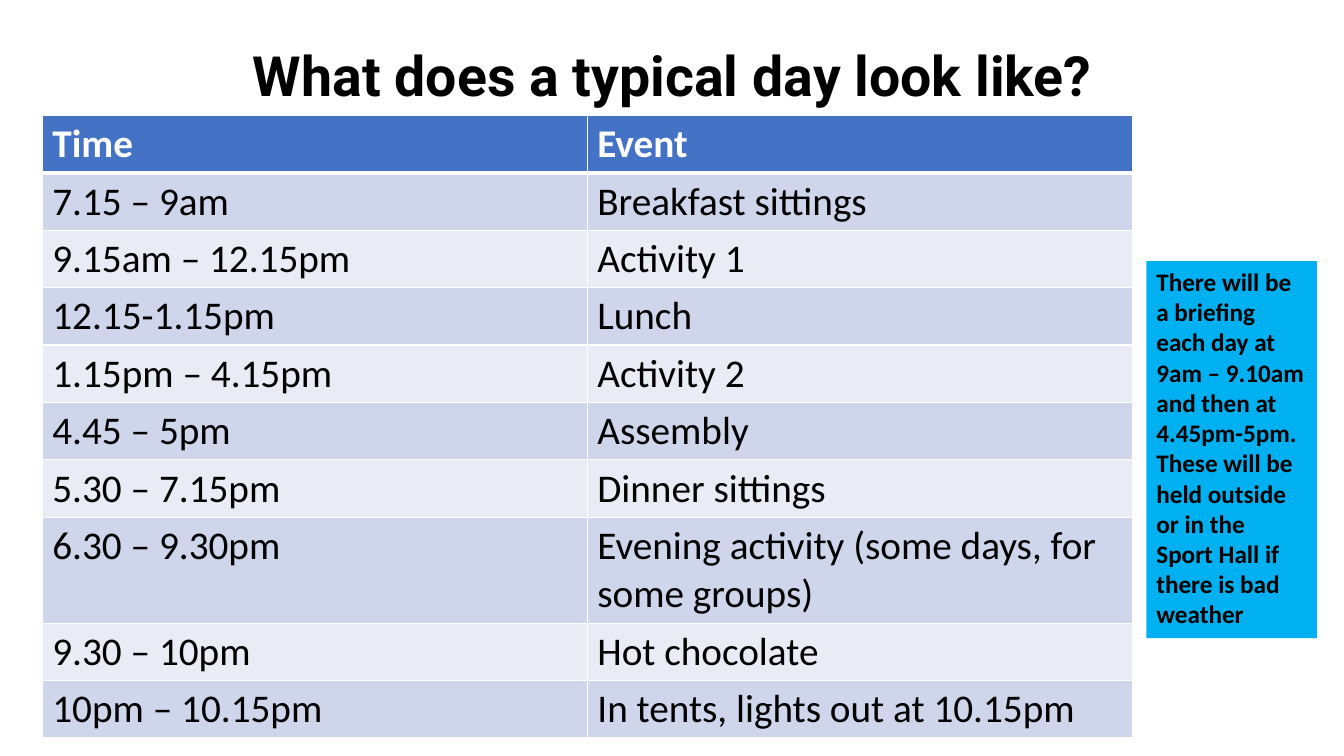
from lxml import etree
from pptx import Presentation
from pptx.dml.color import RGBColor
from pptx.enum.shapes import MSO_SHAPE
from pptx.enum.text import MSO_ANCHOR, PP_ALIGN
from pptx.oxml.ns import qn
from pptx.util import Inches, Pt

RECT = MSO_SHAPE.RECTANGLE
TOP, MIDDLE = MSO_ANCHOR.TOP, MSO_ANCHOR.MIDDLE
LEFT, CENTER = PP_ALIGN.LEFT, PP_ALIGN.CENTER

COLORS = {
    "text": "000000",
    "white": "FFFFFF",
    "header": "4472C4",
    "band_dark": "CFD5EA",
    "band_light": "E9EBF5",
    "note": "00B0F0",
}

SCHEDULE = [
    ("Time", "Event"),
    ("7.15 – 9am", "Breakfast sittings"),
    ("9.15am – 12.15pm", "Activity 1"),
    ("12.15-1.15pm", "Lunch"),
    ("1.15pm – 4.15pm", "Activity 2"),
    ("4.45 – 5pm", "Assembly"),
    ("5.30 – 7.15pm", "Dinner sittings"),
    ("6.30 – 9.30pm", "Evening activity (some days, for some groups)"),
    ("9.30 – 10pm", "Hot chocolate"),
    ("10pm – 10.15pm", "In tents, lights out at 10.15pm"),
]
EVENING_ROW = 7
NOTE = ("There will be a briefing each day at 9am – 9.10am and then at "
        "4.45pm-5pm. These will be held outside or in the Sport Hall if "
        "there is bad weather")


class SlideBuilder:
    """Style and current slide; a grid column or row is 1% of the slide."""

    title_font, body_font = "Roboto", "Calibri"

    def __init__(self, prs):
        self.col = prs.slide_width / 100
        self.row = prs.slide_height / 100
        self.s = prs.slides.add_slide(prs.slide_layouts[6])

    def box(self, x, y, w, h):
        return (round(x * self.col), round(y * self.row),
                round(w * self.col), round(h * self.row))

    def color(self, name):
        return RGBColor.from_string(COLORS[name])

    def fill(self, target, name):
        target.fill.solid()
        target.fill.fore_color.rgb = self.color(name)

    def add_text(self, tf, text, size, font, color="text", bold=True,
                 align=LEFT, anchor=TOP):
        tf.word_wrap = True
        tf.vertical_anchor = anchor
        p = tf.paragraphs[0]
        p.alignment = align
        r = p.add_run()
        r.text = text
        r.font.size, r.font.name, r.font.bold = Pt(size), font, bold
        r.font.color.rgb = self.color(color)
        return p

    def title(self, text, *grid):
        sp = self.s.shapes.add_textbox(*self.box(*grid))
        p = self.add_text(sp.text_frame, text, 39.6, self.title_font,
                          align=CENTER, anchor=MIDDLE)
        p.line_spacing = 0.9

    def note(self, text, *grid):
        sp = self.s.shapes.add_shape(RECT, *self.box(*grid))
        sp.shadow.inherit = False
        self.fill(sp, "note")
        sp.line.fill.background()
        self.add_text(sp.text_frame, text, 18, self.body_font)

    def borders(self, cell, top, bottom):
        tc_pr = cell._tc.get_or_add_tcPr()
        widths = {"a:lnL": 1, "a:lnR": 1, "a:lnT": top, "a:lnB": bottom}
        for tag, width in widths.items():
            ln = etree.SubElement(tc_pr, qn(tag), w=str(Pt(width)))
            solid = etree.SubElement(ln, qn("a:solidFill"))
            etree.SubElement(solid, qn("a:srgbClr"), val=COLORS["white"])

    def table(self, rows, x, y, w, row_h, tall_rows):
        heights = [tall_rows.get(i, row_h) for i in range(len(rows))]
        frame = self.s.shapes.add_table(
            len(rows), len(rows[0]), *self.box(x, y, w, sum(heights)))
        table = frame.table
        for i, texts in enumerate(rows):
            table.rows[i].height = round(heights[i] * self.row)
            header = i == 0
            band = "header" if header else ("band_light", "band_dark")[i % 2]
            for j, text in enumerate(texts):
                cell = table.cell(i, j)
                # Thick rule between the header and the first row
                self.borders(cell, 3 if i == 1 else 1, 3 if header else 1)
                self.fill(cell, band)
                self.add_text(cell.text_frame, text, 28, self.body_font,
                              "white" if header else "text", header)


def main():
    prs = Presentation()
    prs.slide_width, prs.slide_height = Inches(13.33), Inches(7.5)
    slide = SlideBuilder(prs)

    # Heading
    slide.title("What does a typical day look like?", 6.9, 5.33, 86.27, 10)

    # Daily timetable
    slide.table(SCHEDULE, 3.15, 15.25, 81.1, 7.6, {EVENING_ROW: 14})

    # Briefing note
    slide.note(NOTE, 85.3, 34.55, 12.68, 49.87)

    prs.save("out.pptx")


if __name__ == "__main__":
    main()
